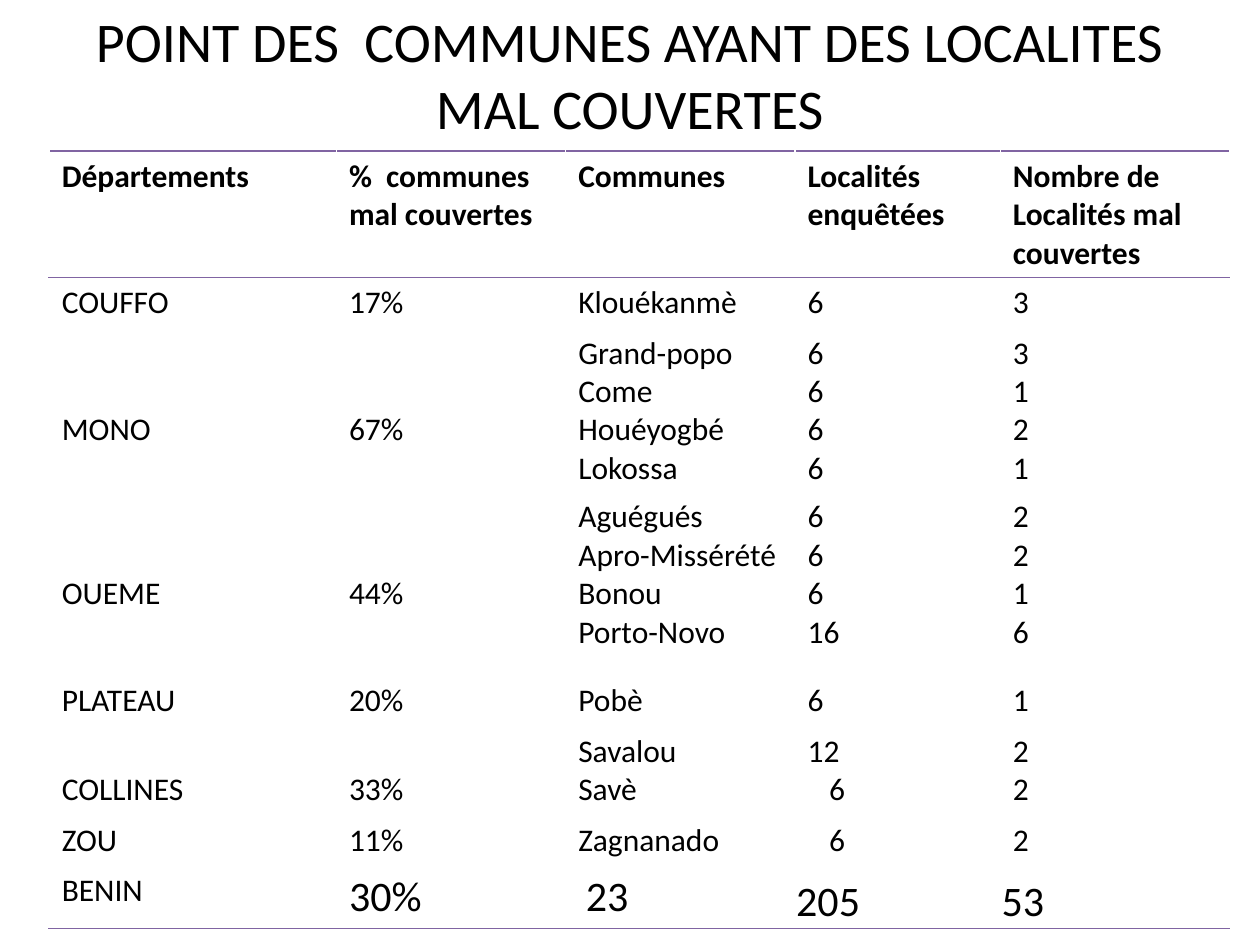
from dataclasses import dataclass

from lxml import etree
from pptx import Presentation
from pptx.dml.color import RGBColor
from pptx.enum.text import MSO_ANCHOR, PP_ALIGN
from pptx.oxml.ns import qn
from pptx.util import Inches, Pt

CENTER = PP_ALIGN.CENTER
MIDDLE, BOTTOM, TOP = MSO_ANCHOR.MIDDLE, MSO_ANCHOR.BOTTOM, MSO_ANCHOR.TOP

FONT = "Calibri"
BLACK, WHITE, PURPLE = "000000", "FFFFFF", "8064A2"
BODY_SIZE, TOTAL_SIZE, TITLE_SIZE = 18, 24, 32
LINE_HEIGHT = 0.305
CELL_MARGIN = 0.05
SHIFTED_INDENT, TOTAL_INDENT = 0.17, 0.06
COLUMN_WIDTHS = (2.28, 1.82, 1.82, 1.63, 1.82)
HEADERS = (
    "Départements",
    "%  communes mal couvertes",
    "Communes",
    "Localités enquêtées",
    "Nombre de Localités mal couvertes",
)
HEADER_HEIGHT, TOTAL_HEIGHT = 0.91, 0.46


@dataclass(frozen=True)
class Commune:
    name: str
    surveyed: int
    poorly_covered: int
    indent: float = 0


@dataclass(frozen=True)
class Department:
    name: str
    share: str
    height: float
    communes: tuple[Commune, ...]
    label_line: int = 0


DEPARTMENTS = (
    Department("COUFFO", "17%", 0.37, (Commune("Klouékanmè", 6, 3),)),
    Department("MONO", "67%", 1.19, (
        Commune("Grand-popo", 6, 3),
        Commune("Come", 6, 1),
        Commune("Houéyogbé", 6, 2),
        Commune("Lokossa", 6, 1),
    ), 2),
    Department("OUEME", "44%", 1.46, (
        Commune("Aguégués", 6, 2),
        Commune("Apro-Missérété", 6, 2),
        Commune("Bonou", 6, 1),
        Commune("Porto-Novo", 16, 6),
    ), 2),
    Department("PLATEAU", "20%", 0.37, (Commune("Pobè", 6, 1),)),
    Department("COLLINES", "33%", 0.64, (
        Commune("Savalou", 12, 2),
        Commune("Savè", 6, 2, SHIFTED_INDENT),
    ), 1),
    Department("ZOU", "11%", 0.37, (Commune("Zagnanado", 6, 2, SHIFTED_INDENT),)),
)


def color(value: str) -> RGBColor:
    return RGBColor.from_string(value)


def add_run(paragraph, text: str, size: float, bold: bool = False) -> None:
    run = paragraph.add_run()
    run.text = text
    run.font.name = FONT
    run.font.size = Pt(size)
    run.font.bold = bold
    run.font.color.rgb = color(BLACK)


def write_cell(cell, lines, size=BODY_SIZE, bold=False, indents=(), first_line=0) -> None:
    """Write one paragraph per line, starting first_line text lines down."""
    cell.fill.solid()
    cell.fill.fore_color.rgb = color(WHITE)
    cell.vertical_anchor = TOP
    cell.margin_top = Inches(CELL_MARGIN + first_line * LINE_HEIGHT)
    frame = cell.text_frame
    for index, line in enumerate(lines):
        paragraph = frame.add_paragraph() if index else frame.paragraphs[0]
        if indents and indents[index]:
            properties = paragraph._p.get_or_add_pPr()
            properties.set("marL", str(Inches(indents[index])))
            properties.set("indent", "0")
        add_run(paragraph, str(line), size, bold)


def add_borders(row, *sides: str) -> None:
    """Draw purple rules on the given sides, listed bottom before top."""
    for cell in row.cells:
        cell_properties = cell._tc.get_or_add_tcPr()
        for side in sides:
            line = etree.Element(qn(f"a:{side}"), w=str(Pt(1)))
            fill = etree.SubElement(line, qn("a:solidFill"))
            etree.SubElement(fill, qn("a:srgbClr"), val=PURPLE)
            cell_properties.insert(0, line)


def add_title(slide) -> None:
    box = slide.shapes.add_textbox(Inches(0.5), Inches(0), Inches(9), Inches(1.17))
    frame = box.text_frame
    frame.word_wrap = True
    frame.vertical_anchor = MIDDLE
    paragraph = frame.paragraphs[0]
    paragraph.alignment = CENTER
    add_run(paragraph, "POINT DES  COMMUNES AYANT DES LOCALITES MAL COUVERTES", TITLE_SIZE)


def fill_department(row, department: Department) -> None:
    communes = department.communes
    name, share, commune_names, surveyed, poorly_covered = row.cells
    write_cell(name, [department.name], first_line=department.label_line)
    write_cell(share, [department.share], first_line=department.label_line)
    write_cell(commune_names, [commune.name for commune in communes])
    write_cell(surveyed, [commune.surveyed for commune in communes],
               indents=[commune.indent for commune in communes])
    write_cell(poorly_covered, [commune.poorly_covered for commune in communes])


def fill_total(row) -> None:
    name, share, commune_count, *locality_counts = row.cells
    write_cell(name, ["BENIN"])
    write_cell(share, ["30%"], TOTAL_SIZE)
    write_cell(commune_count, ["23"], TOTAL_SIZE, indents=[TOTAL_INDENT])
    for cell, count in zip(locality_counts, (205, 53)):
        write_cell(cell, [count], TOTAL_SIZE)
        cell.vertical_anchor = BOTTOM
        cell.margin_left = cell.margin_right = cell.margin_top = Inches(0.01)
        cell.margin_bottom = Inches(0)


def add_coverage_table(slide) -> None:
    heights = [HEADER_HEIGHT, *(item.height for item in DEPARTMENTS), TOTAL_HEIGHT]
    table = slide.shapes.add_table(
        len(heights), len(COLUMN_WIDTHS), Inches(0.39), Inches(1.2),
        Inches(sum(COLUMN_WIDTHS)), Inches(sum(heights)),
    ).table
    table.first_row = table.horz_banding = False
    for column, width in zip(table.columns, COLUMN_WIDTHS):
        column.width = Inches(width)
    for row, height in zip(table.rows, heights):
        row.height = Inches(height)

    header, *department_rows, total = table.rows
    for cell, label in zip(header.cells, HEADERS):
        write_cell(cell, [label], bold=True)
    for row, department in zip(department_rows, DEPARTMENTS):
        fill_department(row, department)
    fill_total(total)

    add_borders(header, "lnB", "lnT")
    add_borders(department_rows[0], "lnT")
    add_borders(total, "lnB")


def main() -> None:
    presentation = Presentation()
    presentation.slide_width = Inches(10)
    presentation.slide_height = Inches(7.5)
    slide = presentation.slides.add_slide(presentation.slide_layouts[6])
    add_title(slide)
    add_coverage_table(slide)
    presentation.save("out.pptx")


if __name__ == "__main__":
    main()
